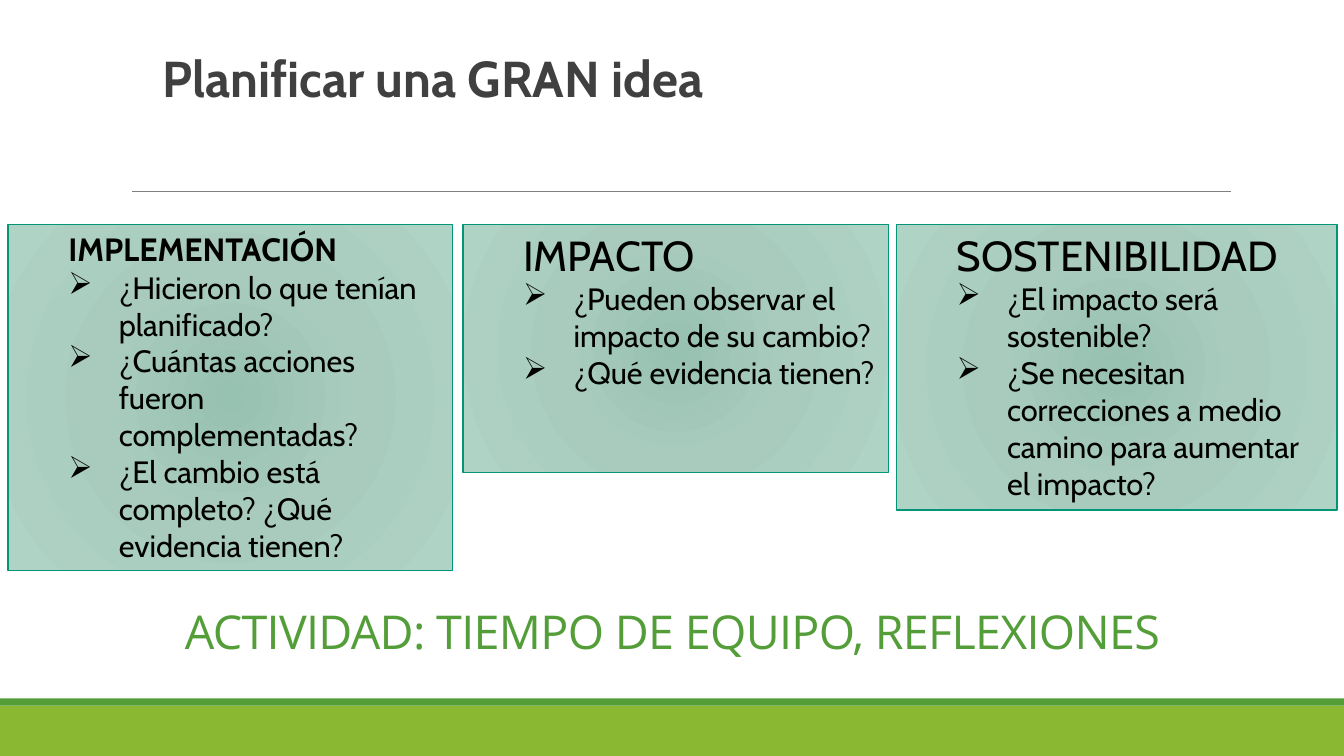
from lxml.etree import SubElement as Sub
from pptx import Presentation
from pptx.dml.color import RGBColor as RGB
from pptx.enum.shapes import MSO_CONNECTOR as CON, MSO_SHAPE as SHAPE
from pptx.enum.text import MSO_ANCHOR as ANCHOR, PP_ALIGN as ALIGN
from pptx.oxml import parse_xml
from pptx.oxml.ns import qn, nsdecls
from pptx.util import Inches, Pt

HEAD = "Planificar una GRAN idea"
TASK = "ACTIVIDAD: TIEMPO DE EQUIPO, REFLEXIONES"
CARDS = [
    (0.08, 4.41, 3.43, "IMPLEMENTACIÓN", 23, True, [
        "¿Hicieron lo que tenían planificado?",
        "¿Cuántas acciones fueron complementadas?",
        "¿El cambio está completo? ¿Qué evidencia tienen?"]),
    (4.59, 4.22, 2.46, "IMPACTO", 30, False, [
        "¿Pueden observar el impacto de su cambio?",
        "¿Qué evidencia tienen?"]),
    (8.89, 4.37, 2.83, "SOSTENIBILIDAD", 30, False, [
        "¿El impacto será sostenible?",
        "¿Se necesitan correcciones a medio camino para aumentar el impacto?"]),
]
HUES = {"lime": "8AB833", "green": "549E39", "rule": "808080", "head": "404040",
        "edge": "029676", "ink": "000000"}
GLOW = [(0, "97C1B1"), (45, "A8CBBD"), (100, "AFD3C5")]
TOP = 2.23
WIDE, HIGH = 13.33, 7.5


def hue(name):
    return RGB.from_string(HUES[name])


def rect(x, y, w, h):
    box = slide.shapes.add_shape(SHAPE.RECTANGLE, *map(Inches, (x, y, w, h)))
    box.shadow.inherit = False
    return box


def band(y, h, name):
    bar = rect(0, y, WIDE, h)
    bar.fill.solid()
    bar.fill.fore_color.rgb = hue(name)
    bar.line.fill.background()


def label(x, y, w, h, pad):
    frame = slide.shapes.add_textbox(*map(Inches, (x, y, w, h))).text_frame
    frame.word_wrap = True
    frame.margin_left = frame.margin_right = Inches(pad[0])
    frame.margin_top = frame.margin_bottom = Inches(pad[1])
    return frame


def write(para, text, size, face, name, bold=False):
    para.text = text
    font = para.font
    font.size, font.name, font.bold = Pt(size), face, bold
    font.color.rgb = hue(name)


def indent(para, left, first=0):
    props = para._p.get_or_add_pPr()
    props.set("marL", str(Inches(left)))
    props.set("indent", str(Inches(first)))
    return props


def bullet(para):
    props = indent(para, 1, -0.5)
    mark = parse_xml(f'<a:buChar {nsdecls("a")} char="➢"/>')
    tint = parse_xml(f'<a:buClr {nsdecls("a")}><a:srgbClr val="{HUES["ink"]}"/></a:buClr>')
    props.insert(0, mark)
    props.insert(0, tint)


def glow(box):
    stops = "".join(f'<a:gs pos="{pos * 1000}"><a:srgbClr val="{tone}"/></a:gs>'
                    for pos, tone in GLOW)
    fill = parse_xml(
        f'<a:gradFill {nsdecls("a")} rotWithShape="1"><a:gsLst>{stops}</a:gsLst>'
        '<a:path path="circle"><a:fillToRect l="50000" t="50000" r="50000" b="50000"/>'
        '</a:path></a:gradFill>')
    box._element.spPr.find(qn("a:prstGeom")).addnext(fill)


def card(x, w, h, title, size, bold, asks):
    box = rect(x, TOP, w, h)
    glow(box)
    box.line.color.rgb = hue("edge")
    box.line.width = Pt(1)
    frame = box.text_frame
    frame.word_wrap = True
    frame.vertical_anchor = ANCHOR.TOP
    para = frame.paragraphs[0]
    para.alignment = ALIGN.LEFT
    write(para, title, size, "Cabin", "ink", bold)
    indent(para, 0.5)
    for ask in asks:
        para = frame.add_paragraph()
        para.alignment = ALIGN.LEFT
        write(para, ask, 22, "Cabin", "ink")
        bullet(para)


deck = Presentation()
deck.slide_width, deck.slide_height = Inches(WIDE), Inches(HIGH)
slide = deck.slides.add_slide(deck.slide_layouts[6])

band(7, 0.5, "lime")
band(6.93, 0.07, "green")
rule = slide.shapes.add_connector(CON.STRAIGHT, *map(Inches, (1.31, 1.9, 12.21, 1.9)))
rule.line.color.rgb = hue("rule")
rule.line.width = Pt(0.5)
Sub(rule._element.spPr, qn("a:effectLst"))

task = label(1.17, 5.74, 11, 1.13, (0.2, 0.2))
task.vertical_anchor = ANCHOR.MIDDLE
para = task.paragraphs[0]
write(para, TASK, 33.3, "Open Sans", "green")
para.alignment = ALIGN.CENTER
para.line_spacing = 0.85
para.runs[0].font._element.set("spc", "-50")

para = label(1.11, 0.49, 10.97, 1.53, (0, 0.05)).paragraphs[0]
write(para, HEAD, 36, "Cabin", "head", True)
para.line_spacing = 0.9
indent(para, 0.5)

for item in CARDS:
    card(*item)

deck.save("out.pptx")
